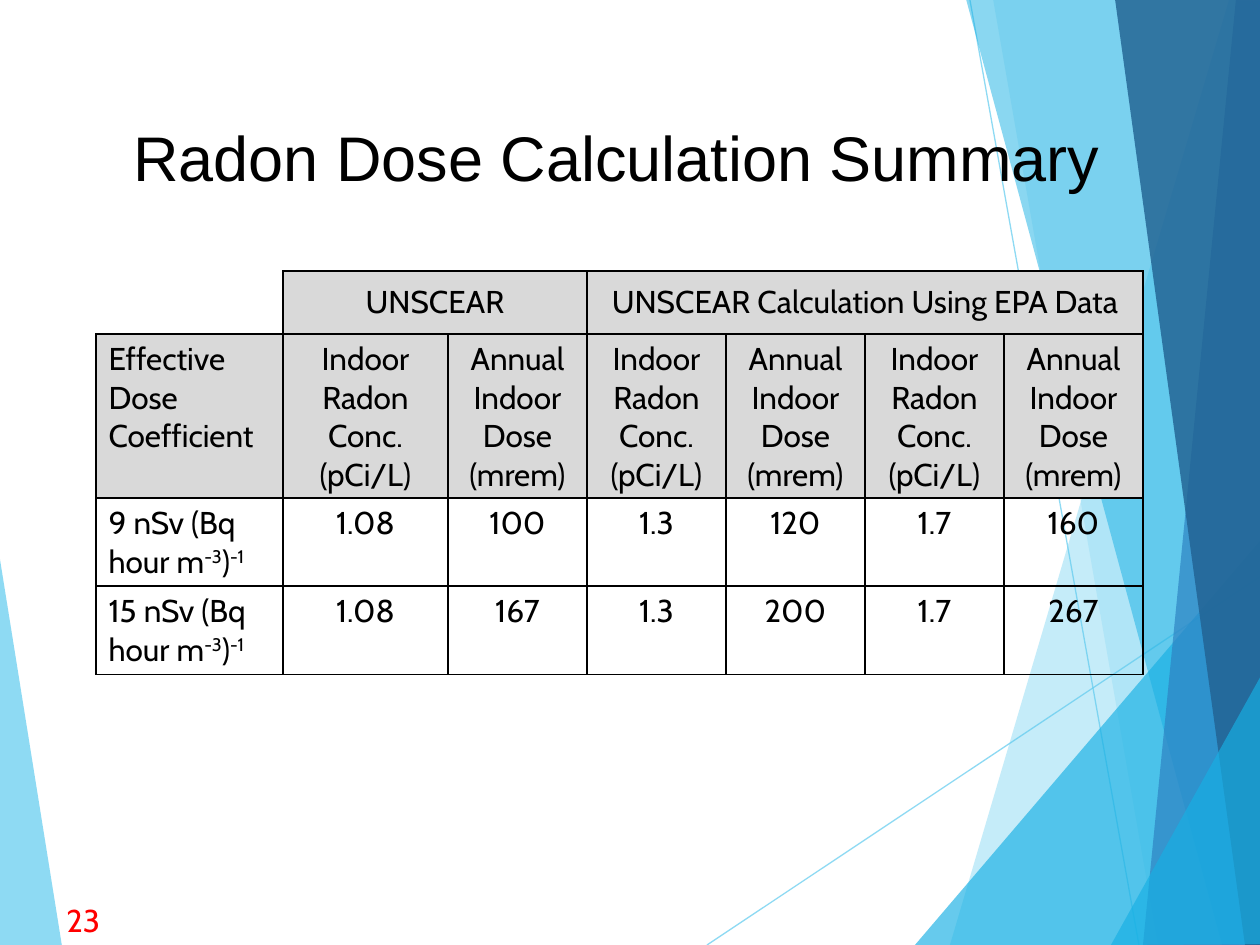
from lxml import etree
from pptx import Presentation
from pptx import util as u
from pptx.dml.color import RGBColor
from pptx.enum import shapes, text
from pptx.oxml import ns

SCALE = 914400 / 126
COLORS = {
    "black": "000000", "red": "FF0000", "header": "D9D9D9",
    "sky": "5FCBEF", "cyan": "17B0E4", "blue": "2E83C3", "navy": "226292",
}
LEFT_FACET = ("sky", 70, [(-1, 553), (62, 946), (-1, 945)])
RAYS = [((707, 945), (1261, 576)), ((970, 0), (1139, 945))]
RIGHT_FACETS = [
    ("sky", 36, [(1229, 0), (950, 945), (1262, 946), (1261, 1)]),
    ("sky", 20, [(993, -1), (1158, 945), (1261, 945), (1261, -1)]),
    ("cyan", 66, [(915, 945), (1260, 541), (1261, 945)]),
    ("cyan", 50, [(966, -1), (1222, 945), (1261, 944), (1261, -1)]),
    ("blue", 70, [(1236, -1), (1143, 945), (1261, 945), (1260, -1)]),
    ("navy", 82, [(1115, -1), (1245, 945), (1262, 945), (1260, -1)]),
    ("cyan", 66, [(1111, 945), (1262, 674), (1262, 944)]),
]
COLUMN_WIDTHS = [187, 165] + [139] * 5
ROW_HEIGHTS = [63, 163, 88, 88]
CONCENTRATION = "Indoor Radon Conc. (pCi/L)"
DOSE = "Annual Indoor Dose (mrem)"
ROWS = [
    ["", "UNSCEAR", "", "UNSCEAR Calculation Using EPA Data", "", "", ""],
    ["Effective Dose Coefficient", CONCENTRATION, "Annual\nIndoor Dose (mrem)"]
    + [CONCENTRATION, DOSE] * 2,
    ["9 nSv (Bq hour m", "1.08", "100", "1.3", "120", "1.7", "160"],
    ["15 nSv (Bq hour m", "1.08", "167", "1.3", "200", "1.7", "267"],
]
UNIT_ENDING = [("-3", True), (")", False), ("-1", True)]


def px(length):
    return u.Emu(round(length * SCALE))


def rgb(name):
    return RGBColor.from_string(COLORS[name])


def set_opacity(shape, percent):
    color = shape._element.spPr.find(".//" + ns.qn("a:srgbClr"))
    etree.SubElement(color, ns.qn("a:alpha"), val=str(percent * 1000))


def style_run(run, size, font, color):
    run.font.size = u.Pt(size)
    run.font.name = font
    run.font.color.rgb = rgb(color)


def add_facet(slide, color, opacity, points):
    corners = [(px(x), px(y)) for x, y in points]
    builder = slide.shapes.build_freeform(*corners[0], scale=1.0)
    builder.add_line_segments(corners[1:], close=True)
    facet = builder.convert_to_shape()
    facet.shadow.inherit = False
    facet.fill.solid()
    facet.fill.fore_color.rgb = rgb(color)
    facet.line.fill.background()
    set_opacity(facet, opacity)


def add_ray(slide, start, end):
    ray = slide.shapes.add_connector(
        shapes.MSO_CONNECTOR.STRAIGHT, *map(px, start + end))
    ray.line.color.rgb = rgb("sky")
    ray.line.width = u.Pt(0.75)
    set_opacity(ray, 70)
    etree.SubElement(ray._element.spPr, ns.qn("a:effectLst"))


def add_label(slide, box, words, size, font, color):
    label = slide.shapes.add_textbox(*map(px, box))
    label.text_frame.word_wrap = True
    label.text_frame.text = words
    style_run(label.text_frame.paragraphs[0].runs[0], size, font, color)


def set_borders(cell, visible):
    properties = cell._tc.get_or_add_tcPr()
    for index, side in enumerate("LRTB"):
        line = etree.Element(ns.qn("a:ln" + side), w=str(u.Pt(1)))
        if side in visible:
            fill = etree.SubElement(line, ns.qn("a:solidFill"))
            etree.SubElement(fill, ns.qn("a:srgbClr"), val=COLORS["black"])
        else:
            etree.SubElement(line, ns.qn("a:noFill"))
        properties.insert(index, line)


def fill_cell(cell, row, column, words):
    if row < 2 and (row, column) != (0, 0):
        cell.fill.solid()
        cell.fill.fore_color.rgb = rgb("header")
    else:
        cell.fill.background()
    set_borders(cell, "LRTB" if row or column else "RB")
    if not words:
        return
    cell.text_frame.text = words
    if row > 1 and column == 0:
        for part, raised in UNIT_ENDING:
            run = cell.text_frame.paragraphs[0].add_run()
            run.text = part
            if raised:
                run._r.get_or_add_rPr().set("baseline", "30000")
    if row == 0:
        cell.vertical_anchor = text.MSO_ANCHOR.MIDDLE
    for paragraph in cell.text_frame.paragraphs:
        paragraph.alignment = text.PP_ALIGN.CENTER if column else text.PP_ALIGN.LEFT
        for run in paragraph.runs:
            style_run(run, 18, "Cabin", "black")


def add_dose_table(slide):
    table = slide.shapes.add_table(
        len(ROWS), len(COLUMN_WIDTHS), px(96), px(271),
        px(sum(COLUMN_WIDTHS)), px(sum(ROW_HEIGHTS))).table
    table.first_row = table.horz_banding = False
    for column, width in zip(table.columns, COLUMN_WIDTHS):
        column.width = px(width)
    for row, height in zip(table.rows, ROW_HEIGHTS):
        row.height = px(height)
    for first, last in [(1, 2), (3, 6)]:
        table.cell(0, first).merge(table.cell(0, last))
    for row, entries in enumerate(ROWS):
        for column, words in enumerate(entries):
            fill_cell(table.cell(row, column), row, column, words)


def main():
    presentation = Presentation()
    presentation.slide_width, presentation.slide_height = px(1260), px(945)
    slide = presentation.slides.add_slide(presentation.slide_layouts[6])
    add_facet(slide, *LEFT_FACET)
    for start, end in RAYS:
        add_ray(slide, start, end)
    for facet in RIGHT_FACETS:
        add_facet(slide, *facet)
    add_label(slide, (121, 112, 997, 89),
              "Radon Dose Calculation Summary", 36, "Arial", "black")
    add_dose_table(slide)
    add_label(slide, (54, 895, 66, 50), "23", 18, "Cabin", "red")
    presentation.save("out.pptx")


if __name__ == "__main__":
    main()
